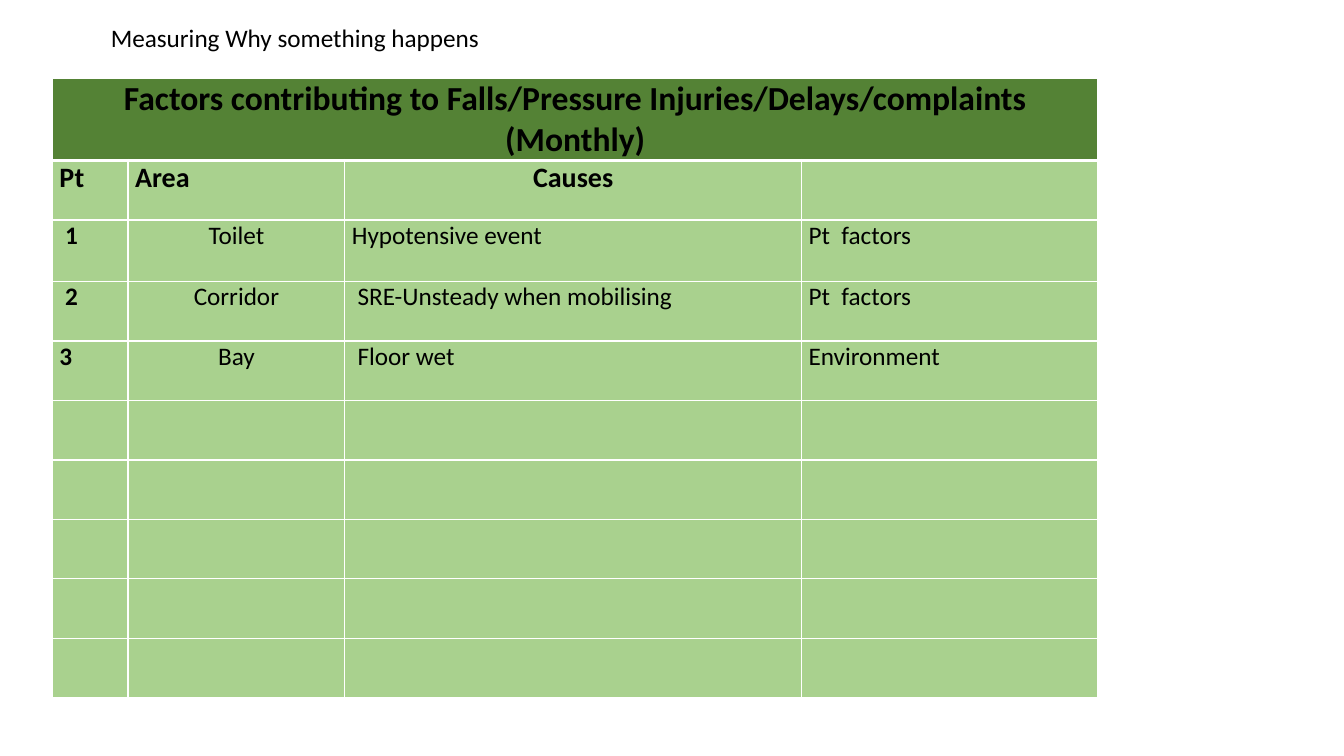
from pptx import Presentation
from pptx.dml.color import RGBColor
from pptx.enum.text import MSO_AUTO_SIZE, PP_ALIGN as Align
from pptx.oxml import parse_xml
from pptx.oxml.ns import nsdecls
from pptx.util import Inches, Pt

COLORS = {"text": "000000", "title": "548235", "body": "A9D18E", "border": "FFFFFF"}
COLUMN_WIDTHS = [0.75, 2.15, 4.53, 2.94]
ROW_HEIGHTS = [0.79, 0.59, 0.61] + [0.59] * 7
TITLE = "Factors contributing to Falls/Pressure Injuries/Delays/complaints (Monthly)"
HEADINGS = ["Pt", "Area", "Causes", ""]
INCIDENTS = [
    [" 1", "Toilet", "Hypotensive event", "Pt  factors"],
    [" 2", "Corridor", " SRE-Unsteady when mobilising", "Pt  factors"],
    ["3", "Bay", " Floor wet", "Environment"],
]


class SlideBuilder:
    font = "Calibri"

    def __init__(self, page):
        self.page = page

    def add_text(self, frame, text, size, bold=False, align=Align.LEFT):
        para = frame.paragraphs[0]
        para.alignment = align
        span = para.add_run()
        span.text = text
        span.font.name = self.font
        span.font.size = Pt(size)
        span.font.bold = bold
        span.font.color.rgb = RGBColor.from_string(COLORS["text"])

    def text_box(self, left, top, width, height, text, size):
        box = self.page.shapes.add_textbox(
            Inches(left), Inches(top), Inches(width), Inches(height))
        box.text_frame.word_wrap = True
        box.text_frame.auto_size = MSO_AUTO_SIZE.SHAPE_TO_FIT_TEXT
        self.add_text(box.text_frame, text, size)

    def table(self, left, top, widths, heights):
        table = self.page.shapes.add_table(
            len(heights), len(widths), Inches(left), Inches(top),
            Inches(sum(widths)), Inches(sum(heights))).table
        table.first_row = table.horz_banding = False
        for column, width in zip(table.columns, widths):
            column.width = Inches(width)
        for row, height in zip(table.rows, heights):
            row.height = Inches(height)
        return table

    def style_cell(self, cell, fill, top=1, bottom=1):
        cell.margin_left = cell.margin_right = Inches(0.07)
        cell.margin_top = cell.margin_bottom = 0
        properties = cell._tc.get_or_add_tcPr()
        for side, width in {"L": 1, "R": 1, "T": top, "B": bottom}.items():
            properties.append(parse_xml(
                f'<a:ln{side} {nsdecls("a")} w="{int(Pt(width))}"><a:solidFill>'
                f'<a:srgbClr val="{COLORS["border"]}"/></a:solidFill></a:ln{side}>'))
        cell.fill.solid()
        cell.fill.fore_color.rgb = RGBColor.from_string(COLORS[fill])


def main():
    deck = Presentation()
    deck.slide_width, deck.slide_height = Inches(13.33), Inches(7.5)
    builder = SlideBuilder(deck.slides.add_slide(deck.slide_layouts[6]))

    # Table grid, with a thick rule below the title row
    table = builder.table(0.52, 0.78, COLUMN_WIDTHS, ROW_HEIGHTS)
    for index, row in enumerate(table.rows):
        for cell in row.cells:
            builder.style_cell(cell, "body" if index else "title",
                               top=3 if index == 1 else 1,
                               bottom=1 if index else 3)

    # Title row
    title = table.cell(0, 0)
    title.merge(table.cell(0, len(COLUMN_WIDTHS) - 1))
    builder.add_text(title.text_frame, TITLE, 24, True, Align.CENTER)

    # Headings and incidents
    for row, texts in enumerate([HEADINGS] + INCIDENTS, start=1):
        heading = row == 1
        centered_column = 2 if heading else 1
        for column, text in enumerate(texts):
            if text:
                builder.add_text(table.cell(row, column).text_frame, text,
                                 20 if heading else 18,
                                 bold=heading or column == 0,
                                 align=Align.CENTER if column == centered_column else Align.LEFT)

    # Caption above the table
    builder.text_box(1, 0.17, 9.08, 0.41, "Measuring Why something happens", 18)

    deck.save("out.pptx")


if __name__ == "__main__":
    main()
